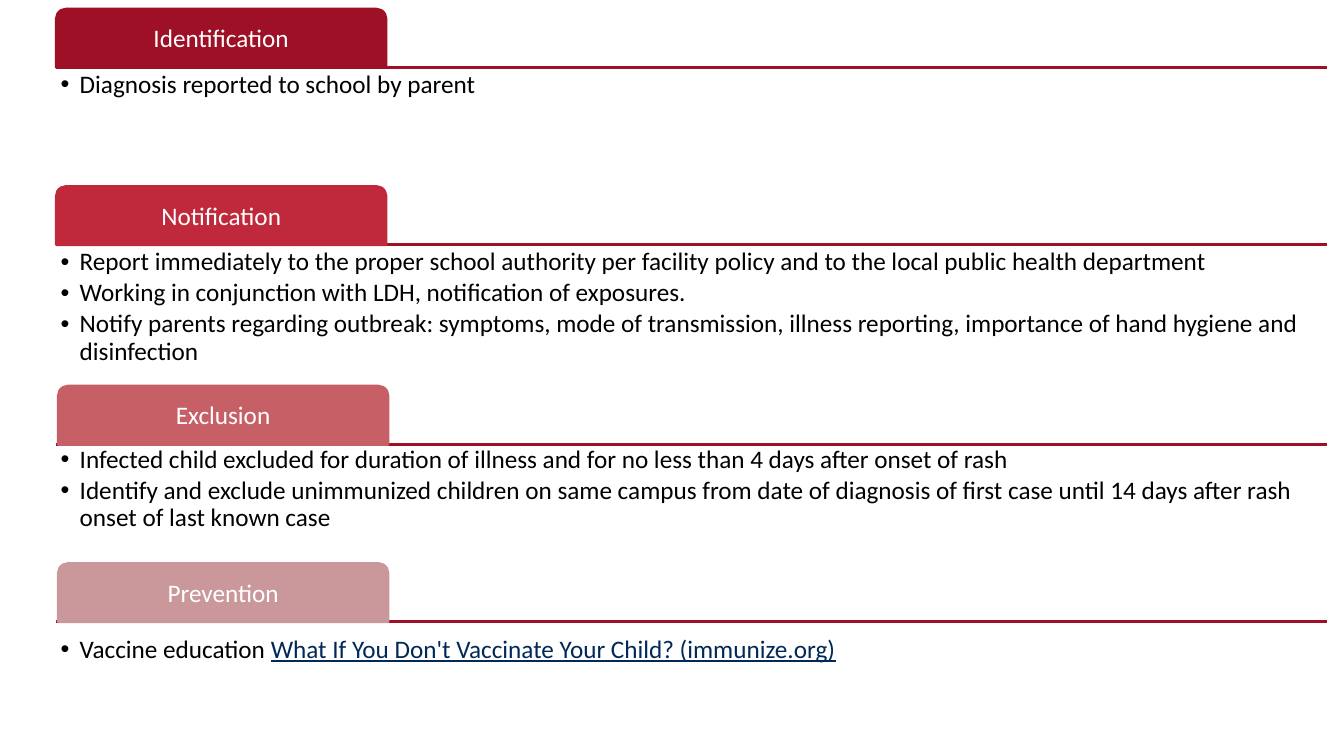
from lxml.etree import SubElement
from pptx import Presentation
from pptx.dml.color import RGBColor
from pptx.enum.shapes import MSO_CONNECTOR, MSO_SHAPE
from pptx.enum.text import MSO_ANCHOR, PP_ALIGN
from pptx.oxml.ns import qn
from pptx.util import Cm, Pt

CRIMSON = RGBColor(0x9D, 0x10, 0x26)
RED = RGBColor(0xC0, 0x29, 0x3B)
ROSE = RGBColor(0xC7, 0x5F, 0x67)
PALE_ROSE = RGBColor(0xCA, 0x98, 0x9A)
WHITE = RGBColor(0xFF, 0xFF, 0xFF)
BLACK = RGBColor(0x00, 0x00, 0x00)
LINK_BLUE = RGBColor(0x00, 0x29, 0x57)

LEFT, RIGHT = 1.42, 33.43
TAB_WIDTH, TAB_HEIGHT = 8.31, 1.47
BODY_HEIGHT = 2.92
INDENT = 0.48

# Title, tab colour, tab left, rule height, body top (cm), bullets, reference
SECTIONS = [
    ("Identification", CRIMSON, 1.42, 1.7, 1.7,
     ["Diagnosis reported to school by parent"], ""),
    ("Notification", RED, 1.42, 6.17, 6.17,
     ["Report immediately to the proper school authority per facility policy "
      "and to the local public health department",
      "Working in conjunction with LDH, notification of exposures.",
      "Notify parents regarding outbreak: symptoms, mode of transmission, "
      "illness reporting, importance of hand hygiene and disinfection"], ""),
    ("Exclusion", ROSE, 1.47, 11.2, 11.15,
     ["Infected child excluded for duration of illness and for no less than "
      "4 days after onset of rash",
      "Identify and exclude unimmunized children on same campus from date of "
      "diagnosis of first case until 14 days after rash onset of last known case"], ""),
    ("Prevention", PALE_ROSE, 1.47, 15.67, 15.93,
     ["Vaccine education "],
     "What If You Don't Vaccinate Your Child? (immunize.org)"),
]


def add_bullet(paragraph):
    properties = paragraph._p.get_or_add_pPr()
    properties.set("marL", str(Cm(INDENT)))
    properties.set("indent", str(-Cm(INDENT)))
    SubElement(properties, qn("a:buFont")).set("typeface", "Arial")
    SubElement(properties, qn("a:buChar")).set("char", "•")


def add_run(paragraph, text, color, underline=None):
    run = paragraph.add_run()
    run.text = text
    run.font.name = "Calibri"
    run.font.size = Pt(18)
    run.font.color.rgb = color
    run.font.underline = underline


def write_text(shape, texts, color=BLACK, align=PP_ALIGN.LEFT,
               anchor=MSO_ANCHOR.TOP, bullet=False, space_after=0):
    frame = shape.text_frame
    frame.word_wrap = True
    frame.vertical_anchor = anchor
    frame.margin_left = frame.margin_right = Cm(0.11)
    frame.margin_top = frame.margin_bottom = Cm(0.11)
    for index, text in enumerate(texts):
        paragraph = frame.add_paragraph() if index else frame.paragraphs[0]
        if bullet:
            add_bullet(paragraph)
        paragraph.alignment = align
        paragraph.line_spacing = 0.9
        paragraph.space_after = Pt(space_after)
        add_run(paragraph, text, color)


def add_rule(slide, height):
    rule = slide.shapes.add_connector(
        MSO_CONNECTOR.STRAIGHT, Cm(LEFT), Cm(height), Cm(RIGHT), Cm(height))
    rule.line.color.rgb = CRIMSON
    rule.line.width = Pt(2)
    SubElement(rule._element.spPr, qn("a:effectLst"))


def add_tab(slide, title, color, left, bottom):
    tab = slide.shapes.add_shape(
        MSO_SHAPE.ROUND_2_SAME_RECTANGLE, Cm(left), Cm(bottom - TAB_HEIGHT),
        Cm(TAB_WIDTH), Cm(TAB_HEIGHT))
    tab.shadow.inherit = False
    tab.adjustments[0] = 0.167
    tab.adjustments[1] = 0
    tab.fill.solid()
    tab.fill.fore_color.rgb = color
    tab.line.color.rgb = color
    tab.line.width = Pt(2)
    write_text(tab, [title], color=WHITE, align=PP_ALIGN.CENTER,
               anchor=MSO_ANCHOR.MIDDLE)


def add_body(slide, top, bullets, reference):
    body = slide.shapes.add_textbox(
        Cm(LEFT), Cm(top), Cm(RIGHT - LEFT), Cm(BODY_HEIGHT))
    write_text(body, bullets, bullet=True, space_after=2.7)
    if reference:
        add_run(body.text_frame.paragraphs[-1], reference, LINK_BLUE, underline=True)


def main():
    presentation = Presentation()
    presentation.slide_width = Cm(33.87)
    presentation.slide_height = Cm(19.05)
    slide = presentation.slides.add_slide(presentation.slide_layouts[6])

    # Rules lie behind the tabs
    for section in SECTIONS:
        add_rule(slide, section[3])

    # Tabs and their bullet lists
    for title, color, left, rule, top, bullets, reference in SECTIONS:
        add_tab(slide, title, color, left, rule)
        add_body(slide, top, bullets, reference)

    presentation.save("out.pptx")


if __name__ == "__main__":
    main()
